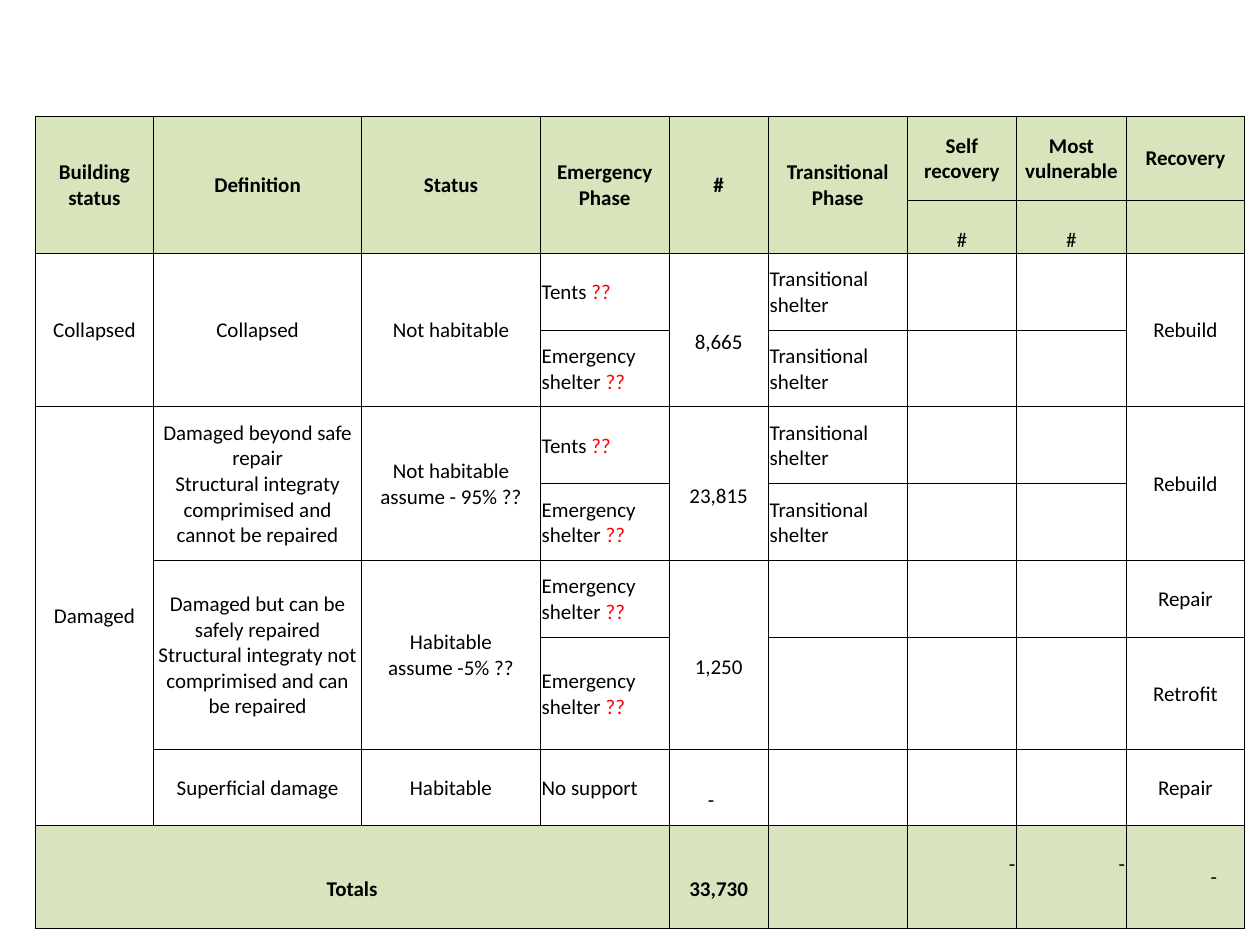
from dataclasses import dataclass

from lxml import etree
from pptx import Presentation
from pptx import util as u
from pptx.dml import color
from pptx.enum import text
from pptx.oxml import ns

COLUMN_WIDTHS = [0.94, 1.65, 1.42, 1.02, 0.79, 1.1, 0.87, 0.87, 0.94]
ROW_HEIGHTS = [0.67, 0.42, 0.61, 0.61, 0.61, 0.61, 0.61, 0.89, 0.6, 0.82]
SUBHEAD_ROW, TOTALS_ROW = 1, 9
PHASE_COLUMNS = (3, 5)
HEADER_GREEN, TOTALS_GREEN = "D8E4BC", "D7E4BD"
BLACK, RED = "000000", "FF0000"
LINE = 0.2


@dataclass
class Entry:
    row: int
    column: int
    wording: str
    rows: int = 1
    columns: int = 1
    query: str = ""
    bold: bool = False
    align: text.PP_ALIGN = text.PP_ALIGN.CENTER
    anchor: text.MSO_ANCHOR = text.MSO_ANCHOR.MIDDLE
    top: float = 0.01
    right: float = 0.01
    bottom: float = 0


def header_entries() -> list[Entry]:
    tall = ["Building status", "Definition", "Status", "Emergency Phase", "#", "Transitional Phase"]
    short = ["Self recovery", "Most vulnerable", "Recovery"]
    headings = [Entry(0, i, name, rows=2, bold=True) for i, name in enumerate(tall)]
    headings += [Entry(0, i, name, bold=True) for i, name in enumerate(short, len(tall))]
    counts = [Entry(SUBHEAD_ROW, i, "#", anchor=text.MSO_ANCHOR.BOTTOM) for i in (6, 7)]
    return headings + counts


def building_entries() -> list[Entry]:
    return [
        Entry(2, 0, "Collapsed", rows=2),
        Entry(2, 1, "Collapsed", rows=2),
        Entry(2, 2, "Not habitable", rows=2),
        Entry(4, 0, "Damaged", rows=5),
        Entry(4, 1, "Damaged beyond safe repair\nStructural integraty comprimised and cannot be repaired", rows=2),
        Entry(4, 2, "Not habitable\nassume - 95% ??", rows=2),
        Entry(6, 1, "Damaged but can be safely repaired\n"
                    "Structural integraty not comprimised and can be repaired", rows=2),
        Entry(6, 2, "Habitable\nassume -5% ??", rows=2),
        Entry(8, 1, "Superficial damage"),
        Entry(8, 2, "Habitable"),
    ]


def phase_entries() -> list[Entry]:
    left = text.PP_ALIGN.LEFT
    tents, shelter = "Tents ", "Emergency shelter "
    emergency = [
        Entry(row, 3, support, query="??", align=left)
        for row, support in enumerate([tents, shelter, tents, shelter, shelter, shelter], 2)
    ]
    transitional = [Entry(row, 5, "Transitional shelter", align=left) for row in range(2, 6)]
    return emergency + [Entry(8, 3, "No support", align=left)] + transitional


def outcome_entries() -> list[Entry]:
    counts = [Entry(row, 4, count, rows=2, top=LINE) for row, count in ((2, "8,665"), (4, "23,815"), (6, "1,250"))]
    counts.append(Entry(8, 4, "-", top=LINE, right=0.13))
    rebuilds = [Entry(row, 8, "Rebuild", rows=2) for row in (2, 4)]
    repairs = [Entry(row, 8, work) for row, work in enumerate(["Repair", "Retrofit", "Repair"], 6)]
    return counts + rebuilds + repairs


def totals_entries() -> list[Entry]:
    right = text.PP_ALIGN.RIGHT
    return [
        Entry(TOTALS_ROW, 0, "Totals", columns=4, bold=True, top=LINE),
        Entry(TOTALS_ROW, 4, "33,730", bold=True, top=LINE),
        Entry(TOTALS_ROW, 6, "-", align=right, bottom=LINE),
        Entry(TOTALS_ROW, 7, "-", align=right, bottom=LINE),
        Entry(TOTALS_ROW, 8, "-", align=right, right=0.22),
    ]


def rgb(value: str) -> color.RGBColor:
    return color.RGBColor.from_string(value)


def style_cell(cell, row: int) -> None:
    properties = cell._tc.get_or_add_tcPr()
    for side in ("a:lnL", "a:lnR", "a:lnT", "a:lnB"):
        border = etree.SubElement(properties, ns.qn(side), w=str(u.Pt(0.5)))
        solid = etree.SubElement(border, ns.qn("a:solidFill"))
        etree.SubElement(solid, ns.qn("a:srgbClr"), val=BLACK)
    if row <= SUBHEAD_ROW or row == TOTALS_ROW:
        cell.fill.solid()
        cell.fill.fore_color.rgb = rgb(HEADER_GREEN if row <= SUBHEAD_ROW else TOTALS_GREEN)
    else:
        cell.fill.background()
    cell.text_frame.paragraphs[0].font.size = u.Pt(12)


def write_entry(table, entry: Entry) -> None:
    cell = table.cell(entry.row, entry.column)
    if entry.rows > 1 or entry.columns > 1:
        cell.merge(table.cell(entry.row + entry.rows - 1, entry.column + entry.columns - 1))
    cell.vertical_anchor = entry.anchor
    cell.margin_left = u.Inches(0.01)
    cell.margin_right = u.Inches(entry.right)
    cell.margin_top = u.Inches(entry.top)
    cell.margin_bottom = u.Inches(entry.bottom)
    paragraph = cell.text_frame.paragraphs[0]
    paragraph.text = entry.wording
    paragraph.alignment = entry.align
    paragraph.font.name = "Calibri"
    paragraph.font.size = u.Pt(12)
    paragraph.font.bold = entry.bold
    paragraph.font.color.rgb = rgb(BLACK)
    if entry.query:
        query = paragraph.add_run()
        query.text = entry.query
        query.font.color.rgb = rgb(RED)


def add_shelter_table(slide):
    frame = slide.shapes.add_table(
        len(ROW_HEIGHTS), len(COLUMN_WIDTHS), u.Inches(0.28), u.Inches(0.92),
        u.Inches(sum(COLUMN_WIDTHS)), u.Inches(sum(ROW_HEIGHTS)),
    )
    table = frame.table
    table.first_row = table.horz_banding = False
    for column, width in zip(table.columns, COLUMN_WIDTHS):
        column.width = u.Inches(width)
    for index, (row, height) in enumerate(zip(table.rows, ROW_HEIGHTS)):
        row.height = u.Inches(height)
        for cell in row.cells:
            style_cell(cell, index)
    return table


def main() -> None:
    """Build the shelter needs slide, from building status to recovery."""
    deck = Presentation()
    deck.slide_width, deck.slide_height = u.Inches(10), u.Inches(7.5)
    slide = deck.slides.add_slide(deck.slide_layouts[6])
    table = add_shelter_table(slide)
    for entries in (header_entries, building_entries, phase_entries, outcome_entries, totals_entries):
        for entry in entries():
            write_entry(table, entry)
    deck.save("out.pptx")


if __name__ == "__main__":
    main()
